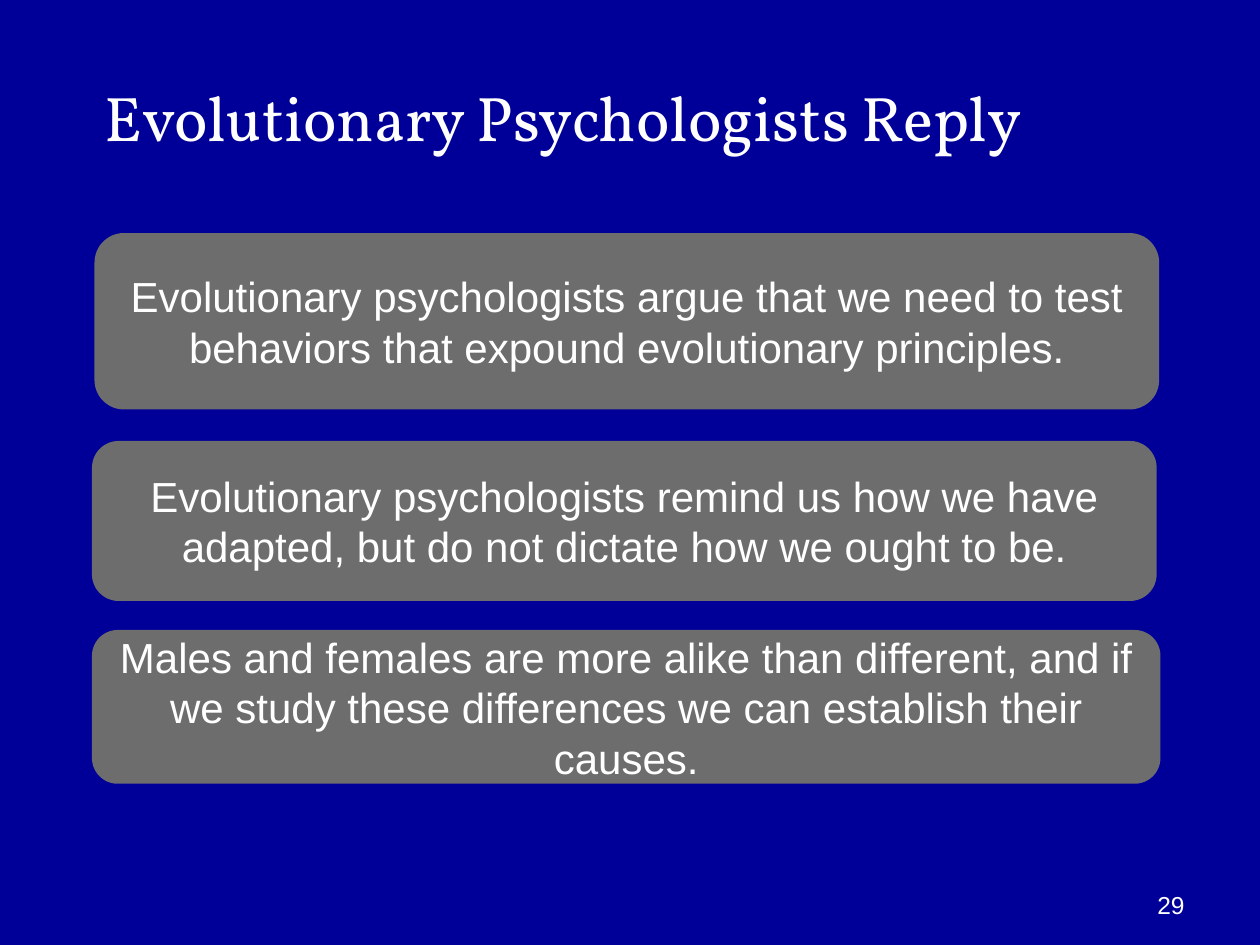
from pptx import Presentation
from pptx.dml.color import RGBColor
from pptx.enum.shapes import MSO_SHAPE
from pptx.enum.text import MSO_ANCHOR, PP_ALIGN
from pptx.util import Inches, Pt

ROUND = MSO_SHAPE.ROUNDED_RECTANGLE
MIDDLE, BOTTOM = MSO_ANCHOR.MIDDLE, MSO_ANCHOR.BOTTOM
LEFT, CENTER, RIGHT = PP_ALIGN.LEFT, PP_ALIGN.CENTER, PP_ALIGN.RIGHT

REPLIES = [
    ((0.75, 1.85, 8.45, 1.4),
     "Evolutionary psychologists argue that we need to test behaviors "
     "that expound evolutionary principles."),
    ((0.73, 3.5, 8.45, 1.27),
     "Evolutionary psychologists remind us how we have adapted, "
     "but do not dictate how we ought to be."),
    ((0.73, 5, 8.48, 1.22),
     "Males and females are more alike than different, and if we study "
     "these differences we can establish their causes."),
]


def color(code):
    return RGBColor.from_string(code)


def write(frame, text, size=24, font="Arial", ink="FFFFFF", align=LEFT, anchor=MIDDLE):
    frame.word_wrap = True
    frame.vertical_anchor = anchor
    para = frame.paragraphs[0]
    para.alignment = align
    run = para.add_run()
    run.text = text
    run.font.size = Pt(size)
    run.font.name = font
    run.font.color.rgb = color(ink)


class Deck:
    """Holds the style and the current slide."""

    back, panel = "000099", "6D6D6D"

    def __init__(self):
        self.file = Presentation()
        self.file.slide_width = Inches(10)
        self.file.slide_height = Inches(7.5)
        self.slide = self.file.slides.add_slide(self.file.slide_layouts[6])
        fill = self.slide.background.fill
        fill.solid()
        fill.fore_color.rgb = color(self.back)

    def label(self, area, text, **style):
        box = self.slide.shapes.add_textbox(*map(Inches, area))
        write(box.text_frame, text, **style)

    def card(self, area, text, **style):
        shape = self.slide.shapes.add_shape(ROUND, *map(Inches, area))
        shape.shadow.inherit = False
        shape.fill.solid()
        shape.fill.fore_color.rgb = color(self.panel)
        shape.line.fill.background()
        write(shape.text_frame, text, **style)


def main():
    deck = Deck()
    deck.label((7.17, 6.83, 2.33, 0.52), "29", size=14, align=RIGHT, anchor=BOTTOM)
    deck.label((0.73, 0.3, 8.5, 1.25), "Evolutionary Psychologists Reply",
               size=36, font="Vollkorn")
    for area, text in REPLIES:
        deck.card(area, text, align=CENTER)
    deck.file.save("out.pptx")


if __name__ == "__main__":
    main()
